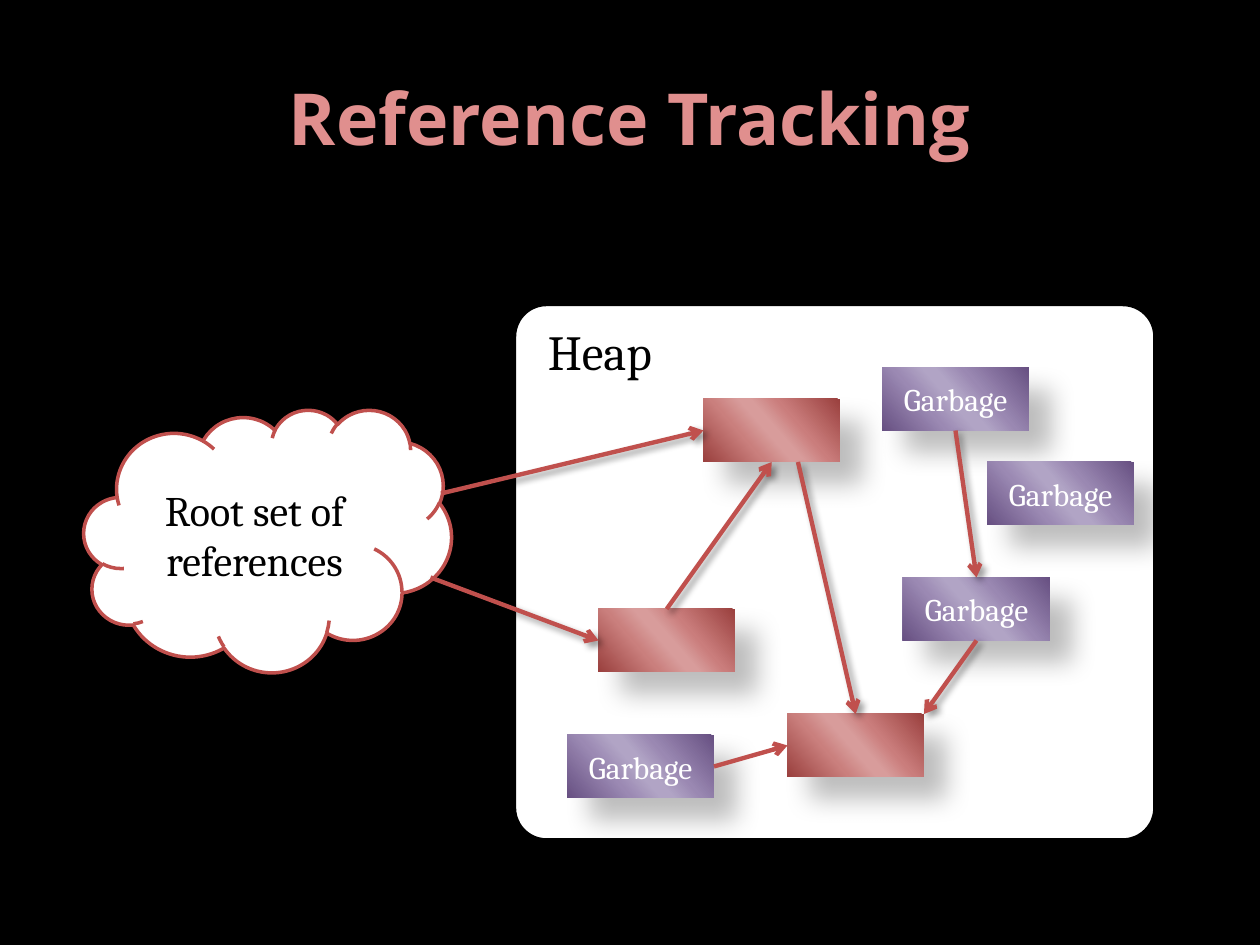
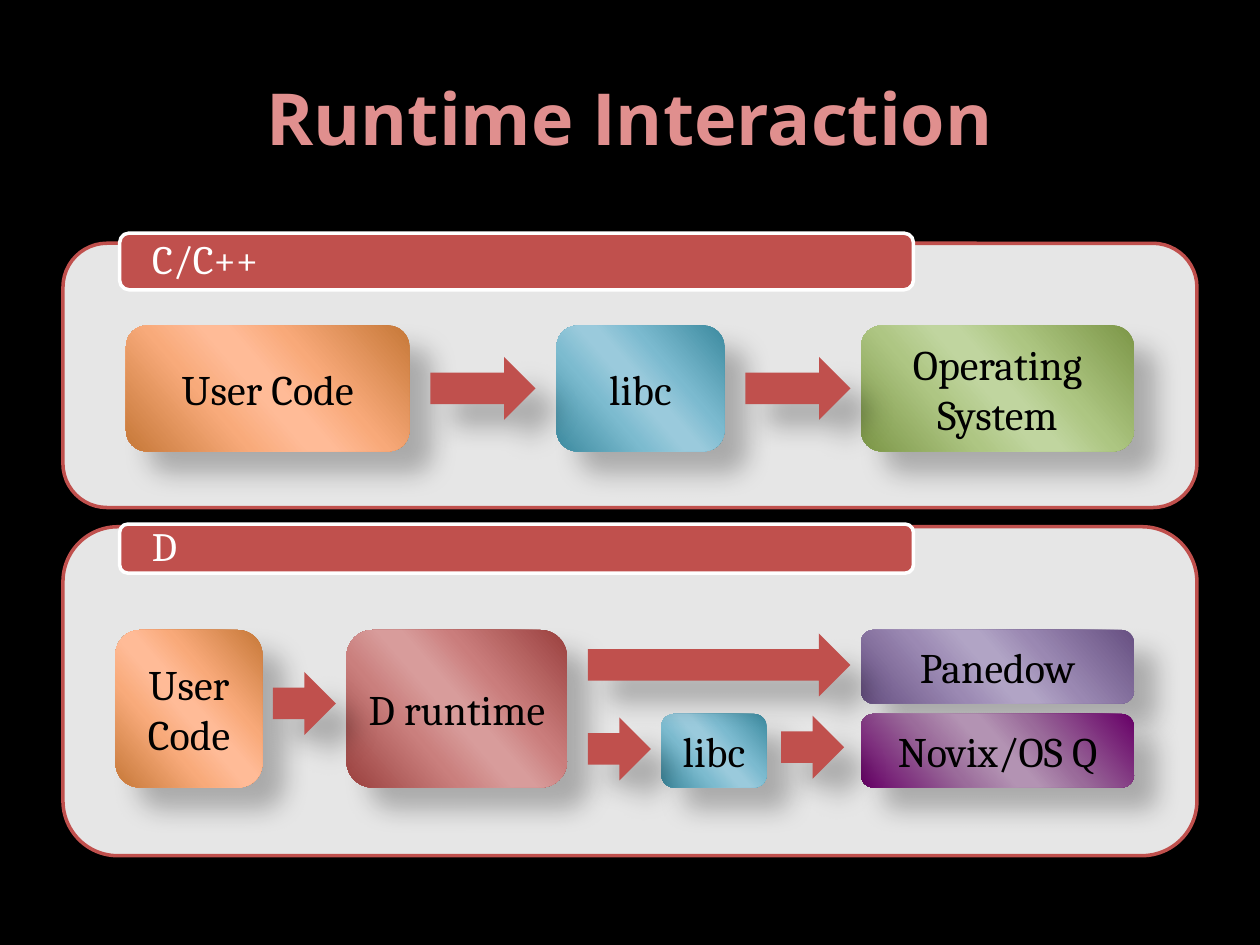
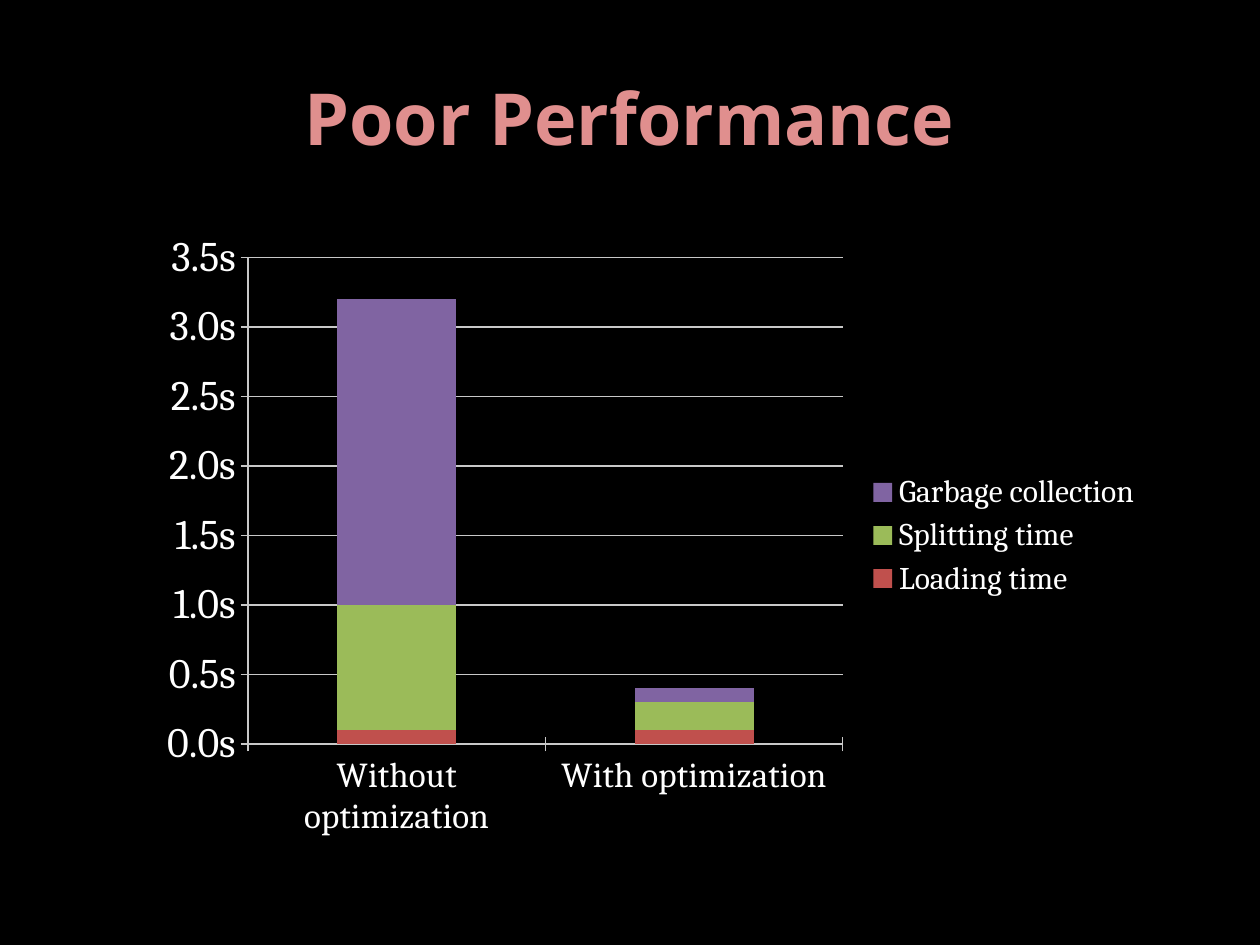
from collections import namedtuple

from lxml.etree import SubElement
from pptx import Presentation
from pptx.chart.data import CategoryChartData
from pptx.dml.color import RGBColor
from pptx.enum.chart import XL_CHART_TYPE, XL_LEGEND_POSITION, XL_TICK_MARK
from pptx.enum.shapes import MSO_CONNECTOR, MSO_SHAPE
from pptx.enum.text import MSO_ANCHOR, PP_ALIGN
from pptx.oxml.ns import qn
from pptx.util import Pt

Box = namedtuple("Box", "left top width height")
Shadow = namedtuple("Shadow", "opacity blur distance")

COLORS = {"black": "000000", "white": "FFFFFF", "red": "C0504D",
          "green": "9BBB59", "purple": "8064A2", "grid": "C8C8C8"}
TITLE_STOPS = [(0, "E08F8E"), (73, "E08F8E"), (100, "DC7775")]
# Each sheen runs from its edge colour through a light band and back.
SHEENS = {
    "red": ("9A403E", "CA7D7C", "D89C9B", "CA7F7D"),
    "purple": ("675082", "9A88B2", "B1A4C5", "9B89B3"),
    "orange": ("C67838", "F8A979", "FFBB97", "F8AA7A"),
    "teal": ("3C8A9F", "7BBACF", "9ACADC", "7CBBCF"),
    "green": ("7C9647", "ADC682", "C0D59F", "AEC683"),
    "plum": ("670067", "9A6B9A", "B393B3", "9B6C9B"),
}
SOFT = Shadow(40, 4, 3)
DEEP = Shadow(26, 15, 18)
BODY_FONT, TITLE_FONT = "Cambria", "Open Sans"


def rgb(name):
    return RGBColor.from_string(COLORS[name])


def points(values):
    return [Pt(value) for value in values]


def within(parent, left, top, width, height):
    """Turn a position relative to parent into a slide position."""
    return Box(parent.left + left, parent.top + top, width, height)


def set_gradient(fill, owner, stops, angle):
    """Replace the fill held by the XML element owner with a linear gradient."""
    fill.solid()
    fill.fore_color.rgb = rgb("black")
    solid = owner.find(qn("a:solidFill"))
    gradient = owner.makeelement(qn("a:gradFill"), {"rotWithShape": "1"})
    stop_list = SubElement(gradient, qn("a:gsLst"))
    for position, color in stops:
        stop = SubElement(stop_list, qn("a:gs"), pos=str(position * 1000))
        SubElement(stop, qn("a:srgbClr"), val=color)
    SubElement(gradient, qn("a:lin"), ang=str(angle * 60000), scaled="0")
    owner.replace(solid, gradient)


def set_sheen(shape, name):
    edge, rise, middle, fall = SHEENS[name]
    stops = [(0, edge), (33, rise), (47, middle), (53, middle), (68, fall), (100, edge)]
    set_gradient(shape.fill, shape._element.spPr, stops, 139)


def set_shadow(properties, shadow):
    """Fill the effect list of a shape or connector; None means no shadow."""
    effects = properties.find(qn("a:effectLst"))
    if effects is None:
        effects = SubElement(properties, qn("a:effectLst"))
    if shadow:
        outer = SubElement(effects, qn("a:outerShdw"), blurRad=str(Pt(shadow.blur)),
                           dist=str(Pt(shadow.distance)), dir="2700000",
                           algn="tl", rotWithShape="0")
        color = SubElement(outer, qn("a:srgbClr"), val=COLORS["black"])
        SubElement(color, qn("a:alpha"), val=str(shadow.opacity * 1000))


def write(shape, text, size, color, font=BODY_FONT):
    para = shape.text_frame.paragraphs[0]
    para.text = text
    span = para.runs[0]
    span.font.size = Pt(size)
    span.font.name = font
    span.font.color.rgb = rgb(color)
    return para


def add_block(page, kind, box, fill=None, sheen=None, line=None, shadow=None):
    shape = page.shapes.add_shape(kind, *points(box))
    if sheen:
        set_sheen(shape, sheen)
    else:
        shape.fill.solid()
        shape.fill.fore_color.rgb = rgb(fill)
    if line:
        shape.line.color.rgb = rgb(line)
        shape.line.width = Pt(2)
    else:
        shape.line.fill.background()
    shape.shadow.inherit = False
    set_shadow(shape._element.spPr, shadow)
    return shape


def add_arrow_line(page, start, end, shadow=SOFT):
    """Join start to end, each a point or a (shape, side) pair."""
    line = page.shapes.add_connector(MSO_CONNECTOR.STRAIGHT, 0, 0, 0, 0)
    if isinstance(start[0], (int, float)):
        line.begin_x, line.begin_y = points(start)
    else:
        line.begin_connect(*start)
    if isinstance(end[0], (int, float)):
        line.end_x, line.end_y = points(end)
    else:
        line.end_connect(*end)
    line.line.color.rgb = rgb("red")
    line.line.width = Pt(2.5)
    properties = line._element.spPr
    SubElement(properties.find(qn("a:ln")), qn("a:tailEnd"), type="arrow")
    set_shadow(properties, shadow)


def add_page(deck, title):
    page = deck.slides.add_slide(deck.slide_layouts[6])
    page.background.fill.solid()
    page.background.fill.fore_color.rgb = rgb("black")
    heading = page.shapes.add_textbox(*points(Box(36, 21.6, 648, 90)))
    heading.text_frame.word_wrap = True
    heading.text_frame.vertical_anchor = MSO_ANCHOR.MIDDLE
    para = write(heading, title, 41, "white", TITLE_FONT)
    para.alignment = PP_ALIGN.CENTER
    span = para.runs[0]
    span.font.bold = True
    set_gradient(span.font.fill, span.font._element, TITLE_STOPS, 80)
    return page


def add_heap(page, box):
    """Draw the heap and return its live objects and its garbage."""
    heap = add_block(page, MSO_SHAPE.ROUNDED_RECTANGLE, box, "white",
                     line="black", shadow=SOFT)
    heap.adjustments[0] = 0.06
    label = page.shapes.add_textbox(*points(within(box, 12, 6, 83, 41)))
    write(label, "Heap", 28, "black")
    live = [add_block(page, MSO_SHAPE.RECTANGLE, within(box, left, top, 78, 36),
                      sheen="red", shadow=DEEP)
            for left, top in [(48, 174), (108, 54), (156, 234)]]
    garbage = []
    for left, top in [(210, 36), (270, 90), (222, 156), (30, 246)]:
        block = add_block(page, MSO_SHAPE.RECTANGLE, within(box, left, top, 84, 36),
                          sheen="purple", shadow=DEEP)
        write(block, "Garbage", 18, "white")
        garbage.append(block)
    return live, garbage


def build_reference_page(deck):
    page = add_page(deck, "Reference Tracking")
    roots = add_block(page, MSO_SHAPE.CLOUD, Box(48, 234, 210, 150), "white",
                      line="red", shadow=SOFT)
    write(roots, "Root set of references", 24, "black")
    live, garbage = add_heap(page, Box(294, 174, 366, 306))
    lower, upper, shared = live
    first, _, second, last = garbage
    top, left, bottom, right = range(4)
    for start, end in [
        ((246, 330), (lower, left)),
        ((252, 282), (upper, left)),
        ((lower, top), (upper, bottom)),
        ((456, 264), (shared, top)),
        ((first, bottom), (second, top)),
        ((second, bottom), (528, 408)),
    ]:
        add_arrow_line(page, start, end)
    add_arrow_line(page, (last, right), (shared, left), shadow=None)


def add_panel(page, box, heading, band_top, band_height, tiles, arrows):
    """Draw a titled panel; tiles and arrows are placed relative to it."""
    panel = add_block(page, MSO_SHAPE.ROUNDED_RECTANGLE, box, "white", line="red")
    color = panel._element.spPr.find(qn("a:solidFill"))[0]
    SubElement(color, qn("a:alpha"), val="90000")
    band = add_block(page, MSO_SHAPE.ROUNDED_RECTANGLE,
                     within(box, 32.4, band_top, 453.6, band_height), "red", line="white")
    frame = band.text_frame
    frame.margin_left = frame.margin_right = Pt(17)
    frame.margin_top = frame.margin_bottom = 0
    para = write(band, heading, 23, "white")
    para.alignment = PP_ALIGN.LEFT
    para.line_spacing = 0.9
    for text, sheen, place in tiles:
        tile = add_block(page, MSO_SHAPE.ROUNDED_RECTANGLE, within(box, *place),
                         sheen=sheen, shadow=DEEP)
        write(tile, text, 24, "black")
    for left, top, width in arrows:
        add_block(page, MSO_SHAPE.RIGHT_ARROW, within(box, left, top, width, 36),
                  "red", shadow=DEEP)


def build_runtime_page(deck):
    page = add_page(deck, "Runtime Interaction")
    add_panel(
        page, Box(36, 139, 648, 151), "C/C++", -5.8, 32.4,
        tiles=[("User Code", "orange", (36, 47, 162, 72)),
               ("libc", "teal", (282, 47, 96, 72)),
               ("Operating System", "green", (456, 47, 156, 72))],
        arrows=[(210, 65, 60), (390, 65, 60)])
    add_panel(
        page, Box(36, 301, 648, 188), "D", -1.5, 28,
        tiles=[("User Code", "orange", (30, 59, 84, 90)),
               ("D runtime", "red", (162, 59, 126, 90)),
               ("libc", "teal", (342, 107, 60, 42)),
               ("Panedow", "purple", (456, 59, 156, 42)),
               ("Novix/OS Q", "plum", (456, 107, 156, 42))],
        arrows=[(120, 83, 36), (300, 61, 150), (300, 109, 36), (410.4, 108, 36)])


def add_timing_chart(page, box):
    data = CategoryChartData()
    data.categories = ["Without optimization", "With optimization"]
    data.add_series("Loading time", (0.1, 0.1))
    data.add_series("Splitting time", (0.9, 0.2))
    data.add_series("Garbage collection", (2.2, 0.1))
    chart = page.shapes.add_chart(XL_CHART_TYPE.COLUMN_STACKED, *points(box), data).chart
    chart.has_title = False
    chart.has_legend = True
    chart.legend.position = XL_LEGEND_POSITION.RIGHT
    chart.legend.include_in_layout = False
    values, categories = chart.value_axis, chart.category_axis
    values.minimum_scale, values.maximum_scale, values.major_unit = 0, 3.5, 0.5
    values.tick_labels.number_format = r"#,##0.0\s"
    values.tick_labels.number_format_is_linked = False
    values.has_major_gridlines = True
    for line in (values.major_gridlines.format.line, values.format.line,
                 categories.format.line):
        line.color.rgb = rgb("grid")
        line.width = Pt(0.75)
    for axis in (values, categories):
        axis.major_tick_mark = XL_TICK_MARK.CROSS
    for font, size in [(chart.font, 10), (chart.legend.font, 18),
                       (values.tick_labels.font, 24), (categories.tick_labels.font, 20)]:
        font.size = Pt(size)
        font.name = BODY_FONT
        font.color.rgb = rgb("white")
    plot = chart.plots[0]
    plot.gap_width, plot.overlap = 150, 100
    plot.vary_by_categories = False
    for series, color in zip(plot.series, ("red", "green", "purple")):
        series.format.fill.solid()
        series.format.fill.fore_color.rgb = rgb(color)


def build_performance_page(deck):
    page = add_page(deck, "Poor Performance")
    add_timing_chart(page, Box(84, 126, 576, 360))


def main():
    deck = Presentation()
    deck.slide_width, deck.slide_height = Pt(720), Pt(540)
    build_reference_page(deck)
    build_runtime_page(deck)
    build_performance_page(deck)
    deck.save("out.pptx")


if __name__ == "__main__":
    main()
